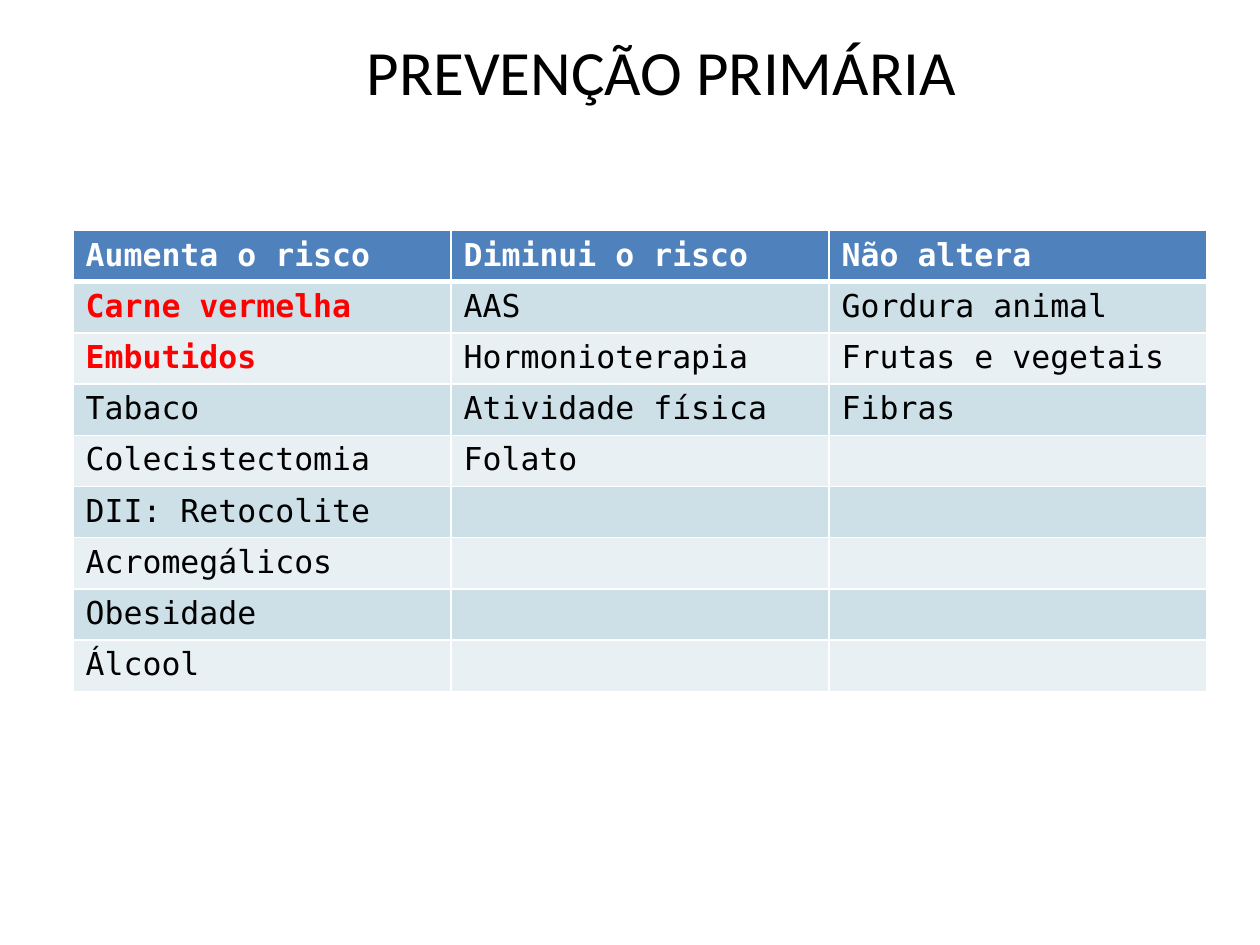
from itertools import zip_longest

from lxml.etree import SubElement
from pptx import Presentation
from pptx.dml.color import RGBColor
from pptx.enum.text import MSO_AUTO_SIZE, PP_ALIGN
from pptx.oxml.ns import qn
from pptx.util import Inches, Pt

COLORS = {
    "black": "000000",
    "white": "FFFFFF",
    "red": "FF0000",
    "header": "4F81BD",
    "odd_row": "CDE0E8",
    "even_row": "E8F0F4",
}
RISK_COLUMNS = {
    "Aumenta o risco": [
        "Carne vermelha", "Embutidos", "Tabaco", "Colecistectomia",
        "DII: Retocolite", "Acromegálicos", "Obesidade", "Álcool",
    ],
    "Diminui o risco": ["AAS", "Hormonioterapia", "Atividade física", "Folato"],
    "Não altera": ["Gordura animal", "Frutas e vegetais", "Fibras"],
}
HIGHLIGHTED = {"Carne vermelha", "Embutidos"}


class SlideBuilder:
    title_font = "Calibri"
    table_font = "DejaVu Sans Mono"

    def __init__(self, page):
        self.page = page

    def add_span(self, paragraph, text, font, size, color, bold=False):
        span = paragraph.add_run()
        span.text = text
        span.font.name = font
        span.font.size = Pt(size)
        span.font.bold = bold
        span.font.color.rgb = RGBColor.from_string(COLORS[color])

    def add_title(self, text, left, top, width, height):
        box = self.page.shapes.add_textbox(
            Inches(left), Inches(top), Inches(width), Inches(height))
        frame = box.text_frame
        frame.word_wrap = True
        frame.auto_size = MSO_AUTO_SIZE.SHAPE_TO_FIT_TEXT
        paragraph = frame.paragraphs[0]
        paragraph.alignment = PP_ALIGN.CENTER
        self.add_span(paragraph, text, self.title_font, 36, "black")

    def set_borders(self, cell, row):
        """Draw thin white borders, thicker between the header and the body."""
        properties = cell._tc.get_or_add_tcPr()
        widths = {"L": 1, "R": 1, "T": 3 if row == 1 else 1, "B": 3 if row == 0 else 1}
        for side, width in widths.items():
            line = SubElement(properties, qn(f"a:ln{side}"), w=str(Pt(width)))
            fill = SubElement(line, qn("a:solidFill"))
            SubElement(fill, qn("a:srgbClr"), val=COLORS["white"])

    def fill_cell(self, cell, row, text):
        self.set_borders(cell, row)
        background = "header" if row == 0 else "odd_row" if row % 2 else "even_row"
        cell.fill.solid()
        cell.fill.fore_color.rgb = RGBColor.from_string(COLORS[background])
        if text:
            highlighted = text in HIGHLIGHTED
            color = "white" if row == 0 else "red" if highlighted else "black"
            self.add_span(cell.text_frame.paragraphs[0], text, self.table_font, 18,
                          color, bold=row == 0 or highlighted)

    def add_table(self, columns, left, top, width, height):
        """Build a table from a mapping of column headings to their entries."""
        rows = [list(columns), *zip_longest(*columns.values(), fillvalue="")]
        table = self.page.shapes.add_table(
            len(rows), len(columns),
            Inches(left), Inches(top), Inches(width), Inches(height)).table
        for row, texts in enumerate(rows):
            for column, text in enumerate(texts):
                self.fill_cell(table.cell(row, column), row, text)


def main():
    deck = Presentation()
    deck.slide_width = Inches(10)
    deck.slide_height = Inches(7.5)
    builder = SlideBuilder(deck.slides.add_slide(deck.slide_layouts[6]))
    builder.add_title("PREVENÇÃO PRIMÁRIA", 1.61, 0.21, 7.28, 0.71)
    builder.add_table(RISK_COLUMNS, 0.58, 1.83, 9, 3.66)
    deck.save("out.pptx")


if __name__ == "__main__":
    main()
